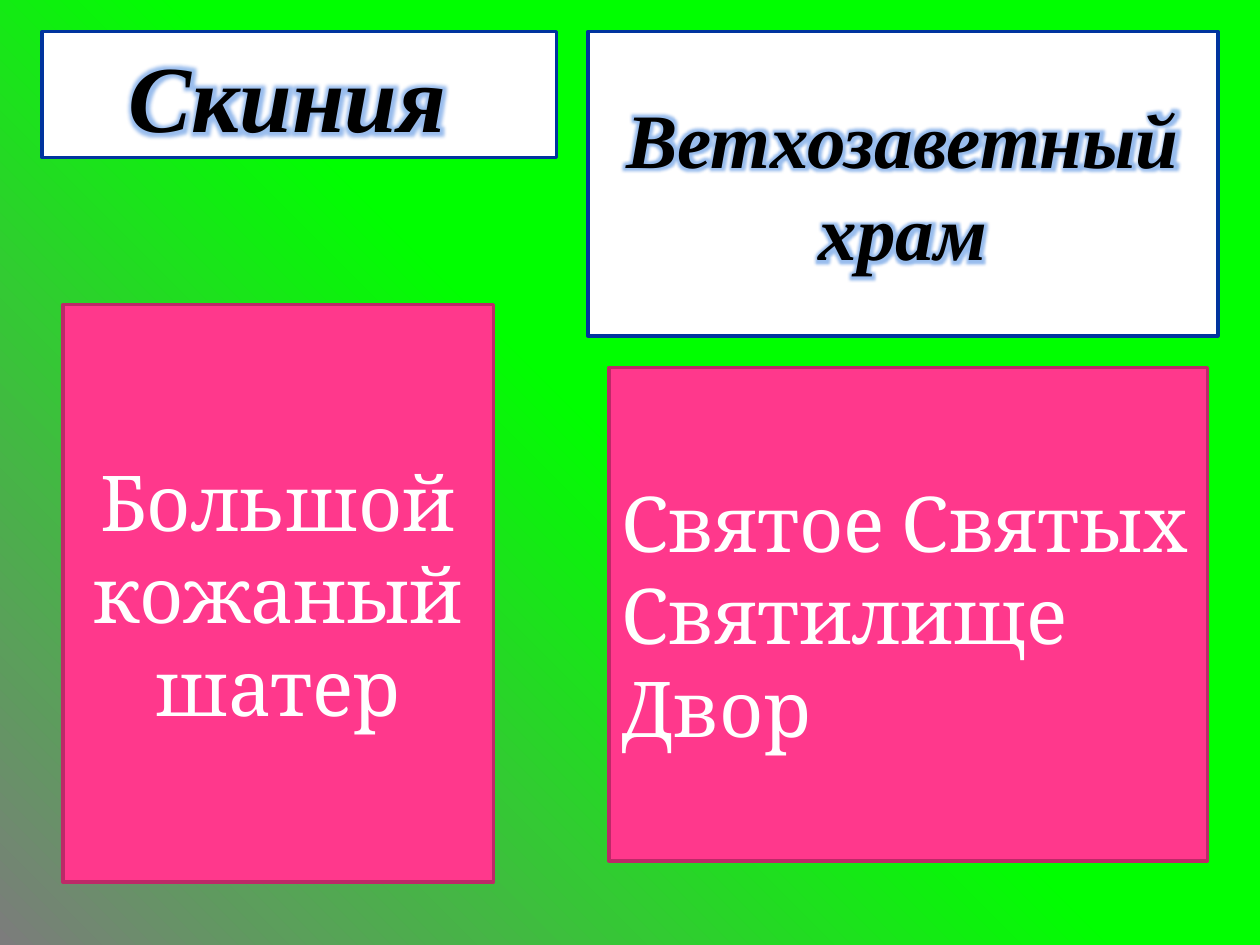
from dataclasses import dataclass

from lxml import etree
from pptx import Presentation
from pptx.dml.color import RGBColor
from pptx.enum.shapes import MSO_SHAPE
from pptx.enum.text import MSO_ANCHOR, PP_ALIGN
from pptx.oxml import parse_xml
from pptx.oxml.ns import nsdecls
from pptx.util import Pt

RECTANGLE = MSO_SHAPE.RECTANGLE
MIDDLE = MSO_ANCHOR.MIDDLE
LEFT, CENTER = PP_ALIGN.LEFT, PP_ALIGN.CENTER


@dataclass(frozen=True)
class Style:
    fill: str
    line: str
    text: str
    font: str
    emphasis: bool = False  # bold, italic and glowing


@dataclass(frozen=True)
class Theme:
    heading = Style("FFFFFF", "00349E", "000000", "Times New Roman", True)
    body = Style("FF388C", "BD2968", "FFFFFF", "Cambria")
    background_inner: str = "00FF00"
    background_outer: str = "7C7C7C"
    glow: str = "005BD3"
    glow_radius: int = Pt(8)
    line_width: int = Pt(2)
    large: int = Pt(54)
    normal: int = Pt(44)


@dataclass(frozen=True)
class Box:
    left: float
    top: float
    width: float
    height: float
    style: Style
    lines: tuple[str, ...]
    size: int
    alignment: PP_ALIGN = CENTER


THEME = Theme()
BOXES = (
    Box(24, 18, 294, 72, THEME.heading, ("Скиния ",), THEME.large),
    Box(36, 174, 246, 330, THEME.body, ("Большой кожаный шатер",), THEME.normal),
    Box(348, 210, 342, 282, THEME.body,
        ("Святое Святых", "Святилище", "Двор"), THEME.normal, LEFT),
    Box(336, 18, 360, 174, THEME.heading, ("Ветхозаветный", "храм"), THEME.normal),
)


def set_background(slide) -> None:
    """Circular gradient that starts in the top right corner."""
    background = parse_xml(
        f'<p:bg {nsdecls("p", "a")}><p:bgPr><a:gradFill rotWithShape="1"><a:gsLst>'
        f'<a:gs pos="49000"><a:srgbClr val="{THEME.background_inner}"/></a:gs>'
        f'<a:gs pos="100000"><a:srgbClr val="{THEME.background_outer}"/></a:gs>'
        '</a:gsLst><a:path path="circle"><a:fillToRect l="100000" b="100000"/></a:path>'
        '</a:gradFill><a:effectLst/></p:bgPr></p:bg>')
    slide.element.cSld.insert(0, background)


def add_glow(run) -> None:
    """Place the glow right after the text fill, as the schema asks."""
    effects = parse_xml(
        f'<a:effectLst {nsdecls("a")}><a:glow rad="{THEME.glow_radius}">'
        f'<a:srgbClr val="{THEME.glow}"><a:alpha val="40000"/></a:srgbClr>'
        '</a:glow></a:effectLst>')
    properties = run.font._element
    fill = next(child for child in properties
                if etree.QName(child).localname == "solidFill")
    fill.addnext(effects)


def add_text(paragraph, text: str, *, style: Style, size: int,
             alignment: PP_ALIGN) -> None:
    paragraph.alignment = alignment
    run = paragraph.add_run()
    run.text = text
    run.font.name = style.font
    run.font.size = size
    run.font.color.rgb = RGBColor.from_string(style.text)
    if style.emphasis:
        run.font.bold = run.font.italic = True
        add_glow(run)


def add_box(slide, box: Box) -> None:
    shape = slide.shapes.add_shape(
        RECTANGLE, Pt(box.left), Pt(box.top), Pt(box.width), Pt(box.height))
    shape.shadow.inherit = False
    shape.fill.solid()
    shape.fill.fore_color.rgb = RGBColor.from_string(box.style.fill)
    shape.line.color.rgb = RGBColor.from_string(box.style.line)
    shape.line.width = THEME.line_width
    frame = shape.text_frame
    frame.word_wrap = True
    frame.vertical_anchor = MIDDLE
    for index, text in enumerate(box.lines):
        paragraph = frame.add_paragraph() if index else frame.paragraphs[0]
        add_text(paragraph, text, style=box.style, size=box.size,
                 alignment=box.alignment)


def main() -> None:
    presentation = Presentation()
    presentation.slide_width, presentation.slide_height = Pt(720), Pt(540)
    slide = presentation.slides.add_slide(presentation.slide_layouts[6])
    set_background(slide)
    # Headings and descriptions, from back to front
    for box in BOXES:
        add_box(slide, box)
    presentation.save("out.pptx")


if __name__ == "__main__":
    main()
